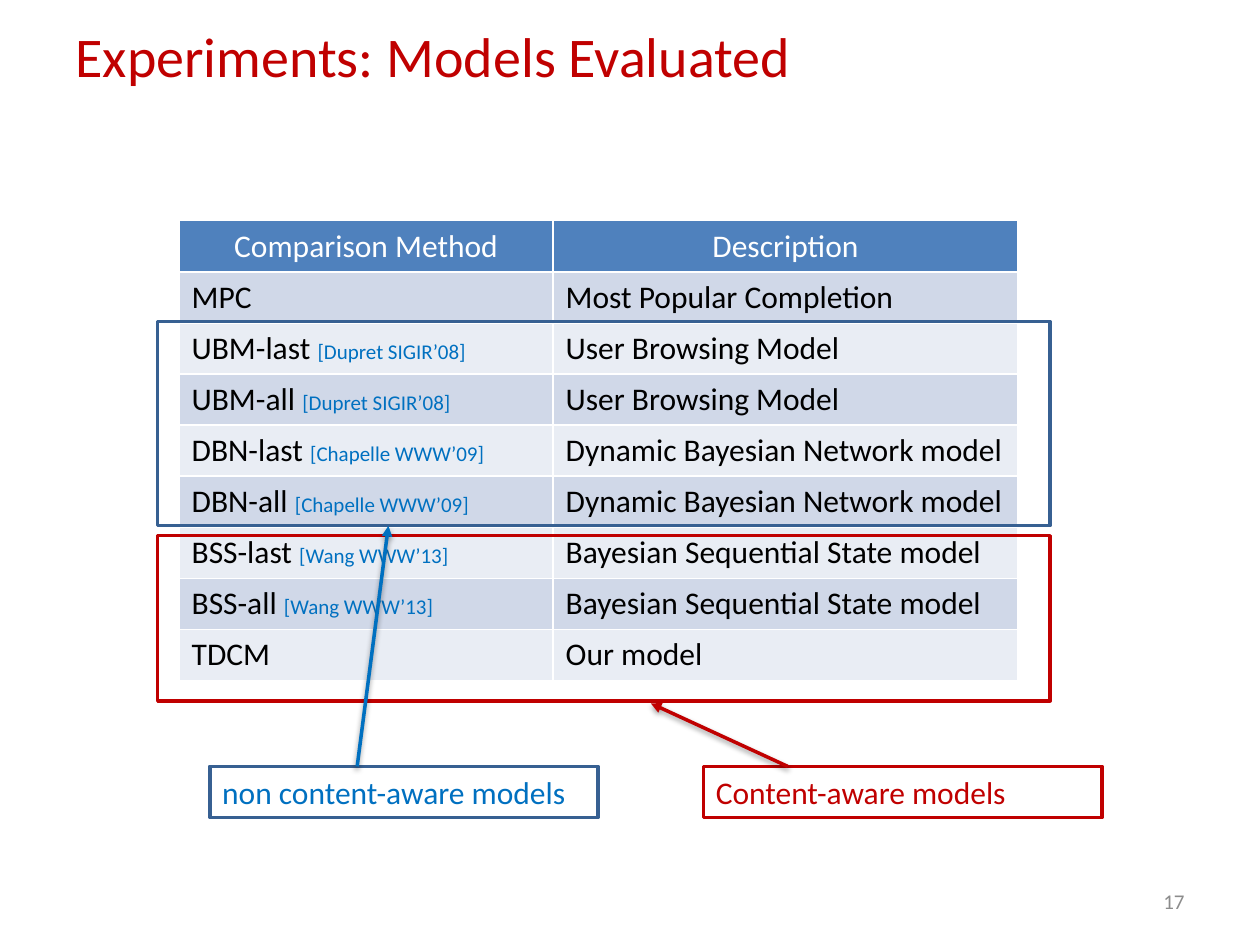
from dataclasses import dataclass

import pptx
import pptx.dml.color
import pptx.enum.shapes
import pptx.enum.text
import pptx.oxml
import pptx.oxml.ns
import pptx.util
from lxml import etree

Cm, Pt = pptx.util.Cm, pptx.util.Pt
RGBColor = pptx.dml.color.RGBColor
ALIGN = pptx.enum.text.PP_ALIGN
MIDDLE = pptx.enum.text.MSO_ANCHOR.MIDDLE

FONT = "Calibri"
RED = RGBColor(0xC0, 0x00, 0x00)
BLUE = RGBColor(0x00, 0x70, 0xC0)
NAVY = RGBColor(0x37, 0x60, 0x92)
GREY = RGBColor(0x8C, 0x8C, 0x8C)
BLACK = RGBColor(0x00, 0x00, 0x00)
WHITE = RGBColor(0xFF, 0xFF, 0xFF)
HEADER_FILL = RGBColor(0x4F, 0x81, 0xBD)
BAND_FILLS = (RGBColor(0xE9, 0xED, 0xF4), RGBColor(0xD0, 0xD8, 0xE8))

SHADOW = (
    f'<a:effectLst {pptx.oxml.ns.nsdecls("a")}>'
    '<a:outerShdw blurRad="40000" dist="20000" dir="5400000" rotWithShape="0">'
    '<a:srgbClr val="000000"><a:alpha val="38000"/></a:srgbClr>'
    "</a:outerShdw></a:effectLst>"
)


@dataclass
class Model:
    name: str
    description: str
    citation: str = ""


@dataclass
class Frame:
    left: float
    top: float
    width: float
    height: float
    color: RGBColor
    text: str = ""
    text_color: RGBColor = BLACK


@dataclass
class Arrow:
    start: tuple[float, float]
    end: tuple[float, float]
    color: RGBColor


MODELS = [
    Model("MPC", "Most Popular Completion"),
    Model("UBM-last", "User Browsing Model", "[Dupret SIGIR’08]"),
    Model("UBM-all", "User Browsing Model", "[Dupret SIGIR’08]"),
    Model("DBN-last", "Dynamic Bayesian Network model", "[Chapelle WWW’09]"),
    Model("DBN-all", "Dynamic Bayesian Network model", "[Chapelle WWW’09]"),
    Model("BSS-last", "Bayesian Sequential State model", "[Wang WWW’13]"),
    Model("BSS-all", "Bayesian Sequential State model", "[Wang WWW’13]"),
    Model("TDCM", "Our model"),
]
FRAMES = [
    Frame(3.18, 6.48, 17.99, 4.12, NAVY),
    Frame(3.18, 10.8, 17.99, 3.33, RED),
    Frame(4.23, 15.45, 7.83, 1.03, NAVY, "non content-aware models", BLUE),
    Frame(14.18, 15.45, 8.04, 1.03, RED, "Content-aware models", RED),
]
ARROWS = [
    Arrow((15.88, 15.45), (13.12, 14.18), RED),
    Arrow((7.2, 15.45), (7.83, 10.6), BLUE),
]
COLUMN_WIDTHS = (7.54, 9.37)
ROW_HEIGHT = 1.03


def style(p, size: float, color: RGBColor, align=ALIGN.LEFT) -> None:
    p.alignment = align
    p.font.name = FONT
    p.font.size = Pt(size)
    p.font.color.rgb = color


def fill_cell(cell, text: str, fill: RGBColor, color: RGBColor, align=ALIGN.LEFT):
    cell.fill.solid()
    cell.fill.fore_color.rgb = fill
    p = cell.text_frame.paragraphs[0]
    p.add_run().text = text
    style(p, 18, color, align)
    p.font.bold = False
    return p


def add_models(slide, models: list[Model]) -> None:
    rows = len(models) + 1
    table = slide.shapes.add_table(
        rows, 2, Cm(3.61), Cm(4.45), Cm(sum(COLUMN_WIDTHS)), Cm(ROW_HEIGHT * rows)
    ).table
    for column, width in zip(table.columns, COLUMN_WIDTHS):
        column.width = Cm(width)
    for row in table.rows:
        row.height = Cm(ROW_HEIGHT)
    for col, heading in enumerate(("Comparison Method", "Description")):
        fill_cell(table.cell(0, col), heading, HEADER_FILL, WHITE, ALIGN.CENTER)
    for row, model in enumerate(models, start=1):
        fill = BAND_FILLS[row % 2]
        name = model.name + (" " if model.citation else "")
        p = fill_cell(table.cell(row, 0), name, fill, BLACK)
        if model.citation:
            r = p.add_run()
            r.text = model.citation
            r.font.size = Pt(12)
            r.font.color.rgb = BLUE
        fill_cell(table.cell(row, 1), model.description, fill, BLACK)


def add_frame(slide, frame: Frame) -> None:
    sp = slide.shapes.add_shape(
        pptx.enum.shapes.MSO_SHAPE.RECTANGLE,
        Cm(frame.left), Cm(frame.top), Cm(frame.width), Cm(frame.height),
    )
    sp.shadow.inherit = False
    sp.fill.background()
    sp.line.color.rgb = frame.color
    sp.line.width = Pt(2)
    if frame.text:
        p = sp.text_frame.paragraphs[0]
        p.text = frame.text
        style(p, 18, frame.text_color)


def add_arrow(slide, arrow: Arrow) -> None:
    line = slide.shapes.add_connector(
        pptx.enum.shapes.MSO_CONNECTOR.STRAIGHT,
        *map(Cm, arrow.start), *map(Cm, arrow.end),
    )
    line.line.color.rgb = arrow.color
    line.line.width = Pt(2)
    ln = line.line._get_or_add_ln()
    etree.SubElement(ln, pptx.oxml.ns.qn("a:tailEnd"), type="triangle")
    line._element.spPr.append(pptx.oxml.parse_xml(SHADOW))


def main() -> None:
    prs = pptx.Presentation()
    prs.slide_width, prs.slide_height = Cm(25.4), Cm(19.05)
    slide = prs.slides.add_slide(prs.slide_layouts[5])

    # Title
    title = slide.shapes.title
    title.left, title.top = Cm(1.27), Cm(0.33)
    title.width, title.height = Cm(22.86), Cm(1.57)
    title.text_frame.vertical_anchor = MIDDLE
    title.text_frame.text = "Experiments: Models Evaluated"
    style(title.text_frame.paragraphs[0], 32, RED)

    # Table of models, with its groups framed and labelled
    add_models(slide, MODELS)
    for frame in FRAMES:
        add_frame(slide, frame)
    for arrow in ARROWS:
        add_arrow(slide, arrow)

    # Slide number
    number = slide.shapes.add_textbox(Cm(18.2), Cm(17.66), Cm(5.93), Cm(1.01))
    tf = number.text_frame
    tf.word_wrap = True
    tf.vertical_anchor = MIDDLE
    tf.text = "17"
    style(tf.paragraphs[0], 12, GREY, ALIGN.RIGHT)

    prs.save("out.pptx")


if __name__ == "__main__":
    main()
